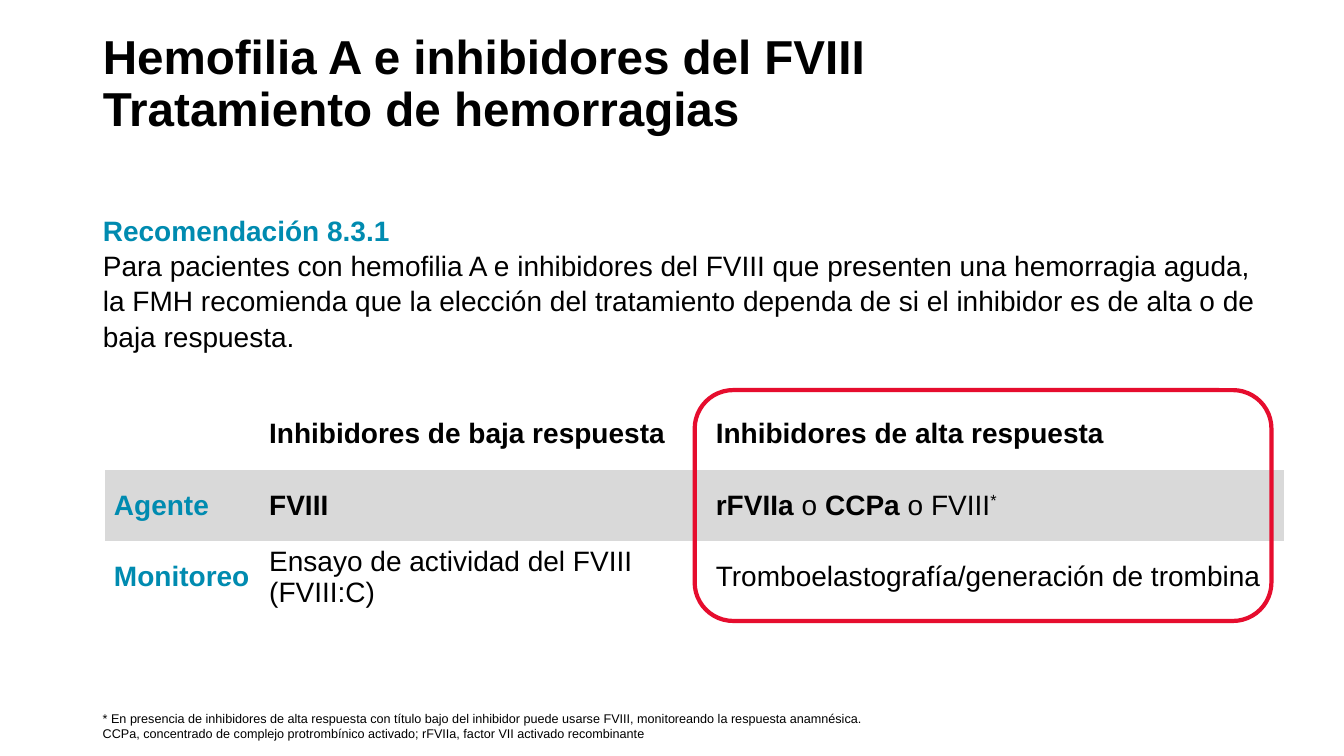
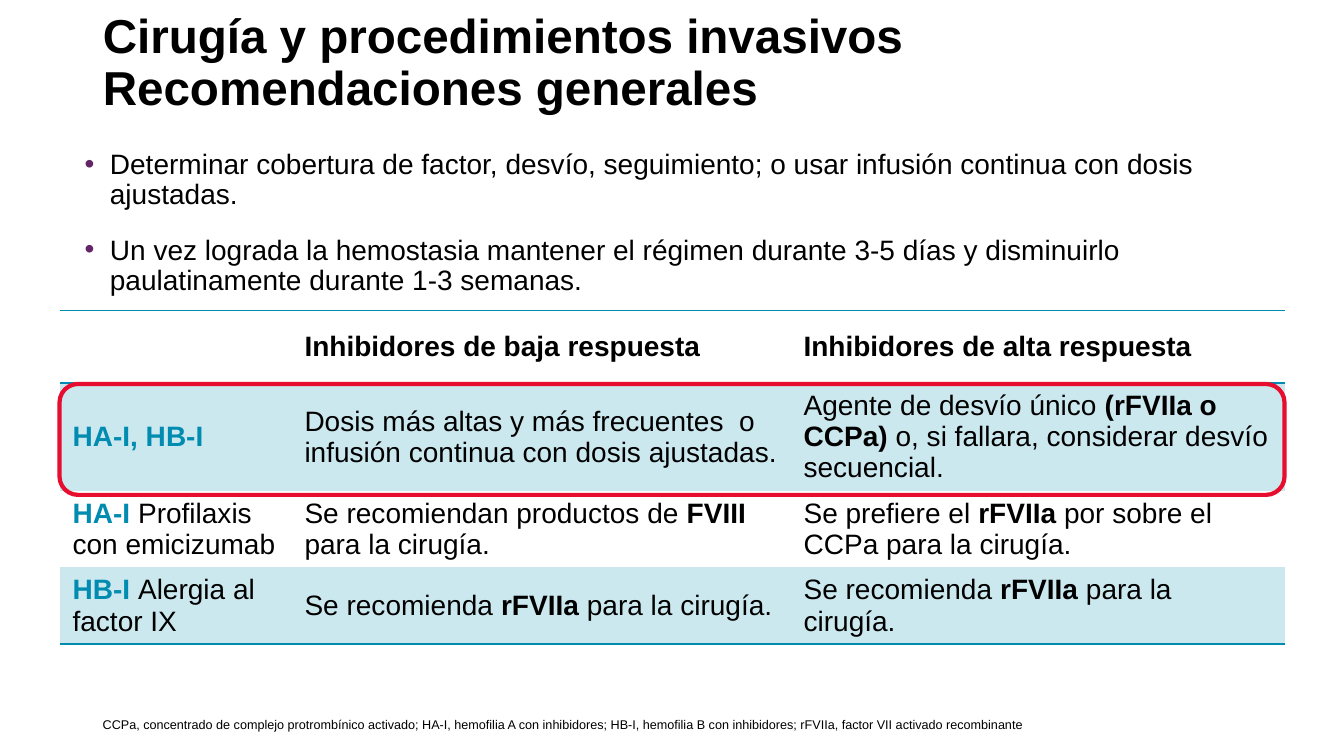
from dataclasses import dataclass

from lxml import etree
from pptx import Presentation
from pptx.dml.color import RGBColor
from pptx.enum import shapes, text
from pptx.oxml.ns import qn
from pptx.util import Inches, Pt


@dataclass(frozen=True)
class Theme:
    font: str = "Arial"
    ink: str = "000000"
    teal: str = "008BB0"
    pale: str = "CCE8EF"
    gray: str = "D9D9D9"
    white: str = "FFFFFF"
    red: str = "E60D2E"
    plum: str = "642566"
    head: int = 34
    base: int = 20
    note: int = 9


def color(code):
    return RGBColor.from_string(code)


class Deck:
    def __init__(self, theme):
        self.theme = theme
        self.show = Presentation()
        self.show.slide_width = Inches(13.33)
        self.show.slide_height = Inches(7.5)
        self.slide = None

    def page(self):
        self.slide = self.show.slides.add_slide(self.show.slide_layouts[1])

    def place(self, shape, box):
        shape.left, shape.top, shape.width, shape.height = map(Inches, box)

    def frame(self, shape, anchor):
        frame = shape.text_frame
        frame.word_wrap = True
        frame.auto_size = text.MSO_AUTO_SIZE.NONE
        frame.vertical_anchor = anchor
        return frame

    def paras(self, frame, count):
        for _ in range(count - 1):
            frame.add_paragraph()
        for para in frame.paragraphs:
            para.alignment = text.PP_ALIGN.LEFT
            para.space_before = Pt(0)
        return frame.paragraphs

    def run(self, para, words, style="", size=None):
        run = para.add_run()
        run.text = words
        font = run.font
        font.name = self.theme.font
        font.size = Pt(size or self.theme.base)
        font.bold = "b" in style
        font.color.rgb = color(self.theme.teal if "t" in style else self.theme.ink)
        if "s" in style:
            run._r.get_or_add_rPr().set("baseline", "30000")

    def title(self, top, lines):
        shape = self.slide.shapes.title
        self.place(shape, (0.92, top, 11.5, 1.19))
        para = self.paras(self.frame(shape, text.MSO_ANCHOR.MIDDLE), 1)[0]
        para.line_spacing = 0.9
        for num, line in enumerate(lines):
            if num:
                para.add_line_break()
            self.run(para, line, "b", self.theme.head)
        for gap in para._p.findall(qn("a:br")):
            etree.SubElement(gap, qn("a:rPr"), sz=str(self.theme.head * 100))

    def mark(self, para, dot):
        props = para._p.get_or_add_pPr()
        inset = Inches(0.25) if dot else 0
        props.set("marL", str(inset))
        props.set("indent", str(-inset))
        if dot:
            tint = etree.SubElement(props, qn("a:buClr"))
            etree.SubElement(tint, qn("a:srgbClr"), val=self.theme.plum)
            etree.SubElement(props, qn("a:buFont"), typeface=self.theme.font)
            etree.SubElement(props, qn("a:buChar"), char="•")
        else:
            etree.SubElement(props, qn("a:buNone"))

    def body(self, box, items, dot, pitch, gap=0):
        shape = self.slide.placeholders[1]
        self.place(shape, box)
        paras = self.paras(self.frame(shape, text.MSO_ANCHOR.TOP), len(items))
        for num, (para, (words, style)) in enumerate(zip(paras, items)):
            self.mark(para, dot)
            para.line_spacing = pitch
            para.space_before = Pt(gap if num else 0)
            self.run(para, words, style)

    def note(self, top, lines):
        shape = self.slide.shapes.add_textbox(*map(Inches, (0.92, top, 10.85, 0.4)))
        frame = self.frame(shape, text.MSO_ANCHOR.BOTTOM)
        frame.margin_bottom = 0
        for para, line in zip(self.paras(frame, len(lines)), lines):
            self.run(para, line, size=self.theme.note)

    def table(self, spot, cols, rows, pad, fills, cells):
        box = (*spot, sum(cols), sum(rows))
        shape = self.slide.shapes.add_table(len(rows), len(cols), *map(Inches, box))
        grid = shape.table
        grid.first_row = grid.horz_banding = False
        grid._tbl.tblPr.find(qn("a:tableStyleId")).text = "{2D5ABB26-0587-4C30-8999-92F81FD0307C}"
        for col, width in zip(grid.columns, cols):
            col.width = Inches(width)
        for row, height, fill, line in zip(grid.rows, rows, fills, cells):
            row.height = Inches(height)
            for cell, runs in zip(row.cells, line):
                self.cell(cell, runs, fill, pad)
        return grid

    def cell(self, cell, runs, fill, pad):
        side, edge = map(Inches, pad)
        cell.margin_left = cell.margin_right = side
        cell.margin_top = cell.margin_bottom = edge
        cell.vertical_anchor = text.MSO_ANCHOR.MIDDLE
        for words, style in runs:
            self.run(cell.text_frame.paragraphs[0], words, style)
        if fill:
            cell.fill.solid()
            cell.fill.fore_color.rgb = color(fill)
        else:
            cell.fill.background()

    def rule(self, row, *sides):
        for cell in row.cells:
            props = cell._tc.get_or_add_tcPr()
            for num, side in enumerate(sides):
                line = etree.Element(qn("a:" + side), w=str(Pt(1)))
                fill = etree.SubElement(line, qn("a:solidFill"))
                etree.SubElement(fill, qn("a:srgbClr"), val=self.theme.teal)
                props.insert(num, line)

    def ring(self, box):
        kind = shapes.MSO_SHAPE.ROUNDED_RECTANGLE
        shape = self.slide.shapes.add_shape(kind, *map(Inches, box))
        shape.shadow.inherit = False
        shape.fill.background()
        shape.line.color.rgb = color(self.theme.red)
        shape.line.width = Pt(3)


HEADS = [
    [],
    [("Inhibidores de baja respuesta", "b")],
    [("Inhibidores de alta respuesta", "b")],
]


def bleeds(deck):
    theme = deck.theme
    deck.page()
    deck.title(0.25, ["Hemofilia A e inhibidores del FVIII", "Tratamiento de hemorragias"])
    deck.body((0.92, 2.05, 11.7, 1.6), [
        ("Recomendación 8.3.1", "bt"),
        ("Para pacientes con hemofilia A e inhibidores del FVIII que presenten una hemorragia aguda, "
         "la FMH recomienda que la elección del tratamiento dependa de si el inhibidor es de alta "
         "o de baja respuesta.", ""),
    ], dot=False, pitch=1.05)
    deck.table((1.04, 3.95), (1.54, 4.43, 5.73), (0.71,) * 3, (0.09, 0.03),
               (theme.white, theme.gray, None), [
        HEADS,
        [[("Agente", "bt")], [("FVIII", "b")],
         [("rFVIIa", "b"), (" o ", ""), ("CCPa ", "b"), ("o FVIII", ""), ("*", "s")]],
        [[("Monitoreo", "bt")], [("Ensayo de actividad del FVIII (FVIII:C)", "")],
         [("Tromboelastografía/generación de trombina", "")]],
    ])
    deck.ring((6.89, 3.87, 5.72, 2.29))
    deck.note(6.95, [
        "* En presencia de inhibidores de alta respuesta con título bajo del inhibidor puede usarse FVIII, "
        "monitoreando la respuesta anamnésica.",
        "CCPa, concentrado de complejo protrombínico activado; rFVIIa, factor VII activado recombinante",
    ])


def surgery(deck):
    pale = deck.theme.pale
    deck.page()
    deck.title(0.04, ["Cirugía y procedimientos invasivos", "Recomendaciones generales"])
    deck.body((0.74, 1.44, 12, 1.64), [
        ("Determinar cobertura de factor, desvío, seguimiento; o usar infusión continua con dosis "
         "ajustadas.", ""),
        ("Un vez lograda la hemostasia mantener el régimen durante 3-5 días y disminuirlo "
         "paulatinamente durante 1-3 semanas.", ""),
    ], dot=True, pitch=0.9, gap=18)
    deck.note(6.86, [
        "CCPa, concentrado de complejo protrombínico activado; HA-I, hemofilia A con inhibidores; "
        "HB-I, hemofilia B con inhibidores; rFVIIa, factor VII activado recombinante",
    ])
    grid = deck.table((0.59, 3.08), (2.3, 4.95, 4.9), (0.72, 1.06, 0.76, 0.76), (0.13, 0.07),
                      (None, pale, None, pale), [
        HEADS,
        [[("HA-I, HB-I", "bt")],
         [("Dosis más altas y más frecuentes  o infusión continua con dosis ajustadas.", "")],
         [("Agente de desvío único ", ""), ("(rFVIIa o CCPa) ", "b"),
          ("o, si fallara, considerar desvío secuencial.", "")]],
        [[("HA-I ", "bt"), ("Profilaxis con emicizumab", "")],
         [("Se recomiendan productos de ", ""), ("FVIII ", "b"), ("para la cirugía.", "")],
         [("Se prefiere el ", ""), ("rFVIIa", "b"), (" por sobre el CCPa para la cirugía.", "")]],
        [[("HB-I ", "bt"), ("Alergia al factor IX", "")],
         [("Se recomienda ", ""), ("rFVIIa ", "b"), ("para la cirugía.", "")],
         [("Se recomienda ", ""), ("rFVIIa", "b"), (" para la cirugía.", "")]],
    ])
    deck.rule(grid.rows[0], "lnT", "lnB")
    deck.rule(grid.rows[3], "lnB")
    deck.ring((0.59, 3.81, 12.15, 1.1))


def main():
    deck = Deck(Theme())
    bleeds(deck)
    surgery(deck)
    deck.show.save("out.pptx")


if __name__ == "__main__":
    main()
